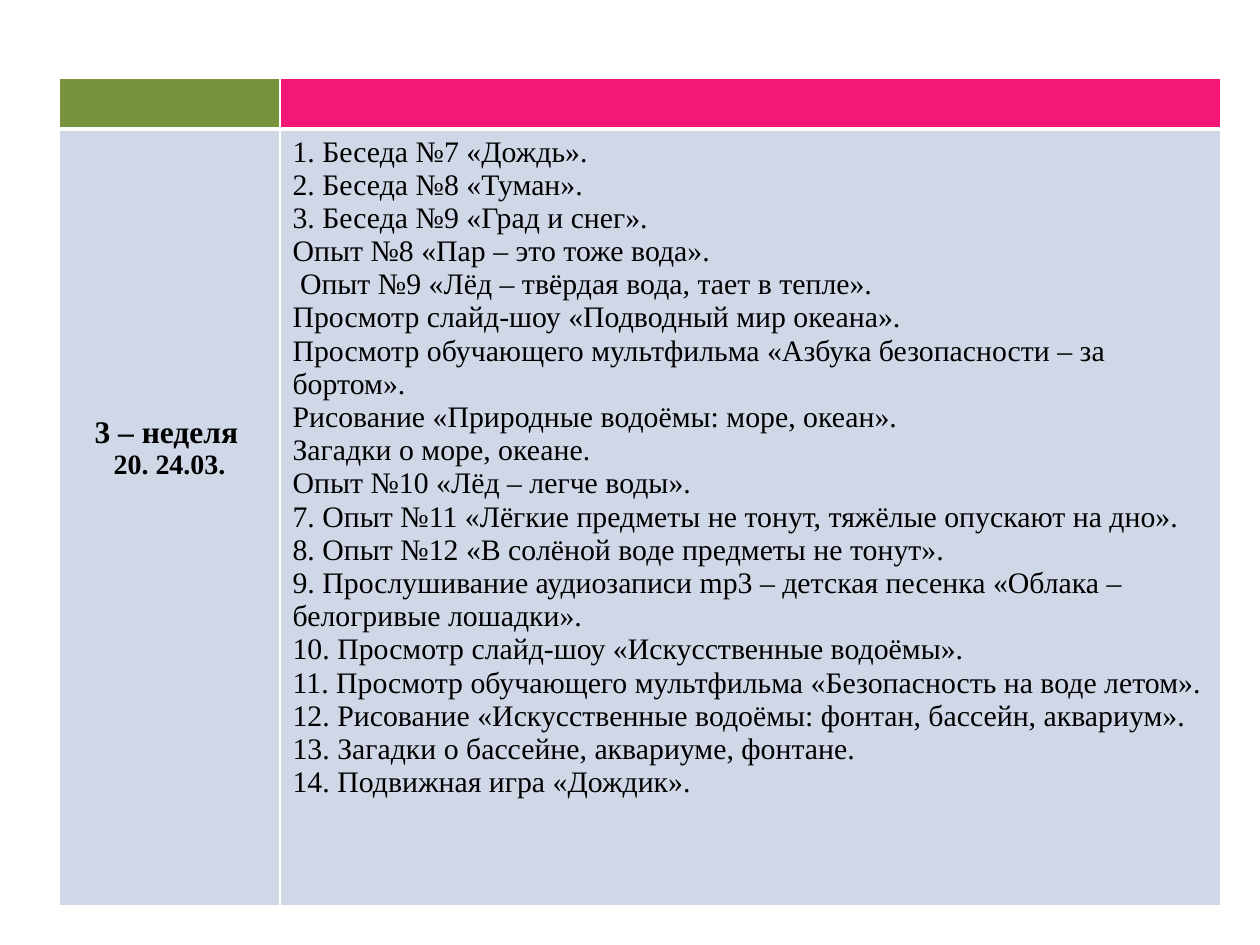
"""Build a slide with the weekly plan of activities about water."""
from dataclasses import dataclass
from lxml.etree import SubElement
from pptx import Presentation
from pptx.dml.color import RGBColor
from pptx.enum.text import PP_ALIGN
from pptx.oxml.ns import qn
from pptx.util import Emu, Pt

WEEK = "3 – неделя"
DATES = "20. 24.03."
PLAN = [
    "1. Беседа №7 «Дождь».",
    "2. Беседа №8 «Туман».",
    "3. Беседа №9 «Град и снег».",
    "Опыт №8 «Пар – это тоже вода».",
    " Опыт №9 «Лёд – твёрдая вода, тает в тепле».",
    "Просмотр слайд-шоу «Подводный мир океана».",
    "Просмотр обучающего мультфильма «Азбука безопасности – за бортом».",
    "Рисование «Природные водоёмы: море, океан».",
    "Загадки о море, океане.",
    "Опыт №10 «Лёд – легче воды».",
    "7. Опыт №11 «Лёгкие предметы не тонут, тяжёлые опускают на дно».",
    "8. Опыт №12 «В солёной воде предметы не тонут».",
    "9. Прослушивание аудиозаписи mp3 – детская песенка «Облака – белогривые лошадки».",
    "10. Просмотр слайд-шоу «Искусственные водоёмы».",
    "11. Просмотр обучающего мультфильма «Безопасность на воде летом».",
    "12. Рисование «Искусственные водоёмы: фонтан, бассейн, аквариум».",
    "13. Загадки о бассейне, аквариуме, фонтане.",
    "14. Подвижная игра «Дождик».",
]
LEFT, TOP = 59, 78
COLS = [221, 941]
ROWS = [50, 777]
WEEK_TOP, WEEK_INDENT = 286, 23


@dataclass(frozen=True)
class Theme:
    """Colours, font and type sizes."""
    font: str = "Times New Roman"
    ink: str = "000000"
    rule: str = "FFFFFF"
    fills: tuple = (("77933C", "F51776"), ("D0D8E8", "D0D8E8"))
    week: int = 18
    dates: int = 16
    plan: int = 17
    thin: int = 1
    thick: int = 3


THEME = Theme()


def px(count):
    """Turn pixels into EMU."""
    return Emu(round(count * 914400 / 126))


def border(cell, row):
    """Rule the four sides, with a thick line under the header."""
    props = cell._tc.get_or_add_tcPr()
    heavy = "lnB" if row == 0 else "lnT"
    for side in ("lnL", "lnR", "lnT", "lnB"):
        width = THEME.thick if side == heavy else THEME.thin
        line = SubElement(props, qn(f"a:{side}"), w=str(Pt(width)))
        fill = SubElement(line, qn("a:solidFill"))
        SubElement(fill, qn("a:srgbClr"), val=THEME.rule)


def write(cell, lines):
    """Write one paragraph for each (text, size, bold, align) line."""
    frame = cell.text_frame
    for i, (text, size, bold, align) in enumerate(lines):
        para = frame.add_paragraph() if i else frame.paragraphs[0]
        para.alignment = align
        run = para.add_run()
        run.text = text
        run.font.name = THEME.font
        run.font.size = Pt(size)
        run.font.bold = bold
        run.font.color.rgb = RGBColor.from_string(THEME.ink)


def main():
    """Make the slide and save it."""
    deck = Presentation()
    deck.slide_width, deck.slide_height = px(1260), px(945)
    slide = deck.slides.add_slide(deck.slide_layouts[6])
    frame = slide.shapes.add_table(
        len(ROWS), len(COLS), px(LEFT), px(TOP), px(sum(COLS)), px(sum(ROWS)))
    table = frame.table
    for col, width in zip(table.columns, COLS):
        col.width = px(width)
    for row, height in zip(table.rows, ROWS):
        row.height = px(height)
    for r, fills in enumerate(THEME.fills):
        for c, fill in enumerate(fills):
            cell = table.cell(r, c)
            border(cell, r)
            cell.fill.solid()
            cell.fill.fore_color.rgb = RGBColor.from_string(fill)

    week, plan = table.cell(1, 0), table.cell(1, 1)
    week.margin_top = px(WEEK_TOP)
    write(week, [(WEEK, THEME.week, True, PP_ALIGN.LEFT),
                 (DATES, THEME.dates, True, PP_ALIGN.CENTER)])
    props = week.text_frame.paragraphs[0]._p.get_or_add_pPr()
    props.set("marL", str(px(WEEK_INDENT)))
    write(plan, [(text, THEME.plan, False, PP_ALIGN.LEFT) for text in PLAN])
    deck.save("out.pptx")


if __name__ == "__main__":
    main()
